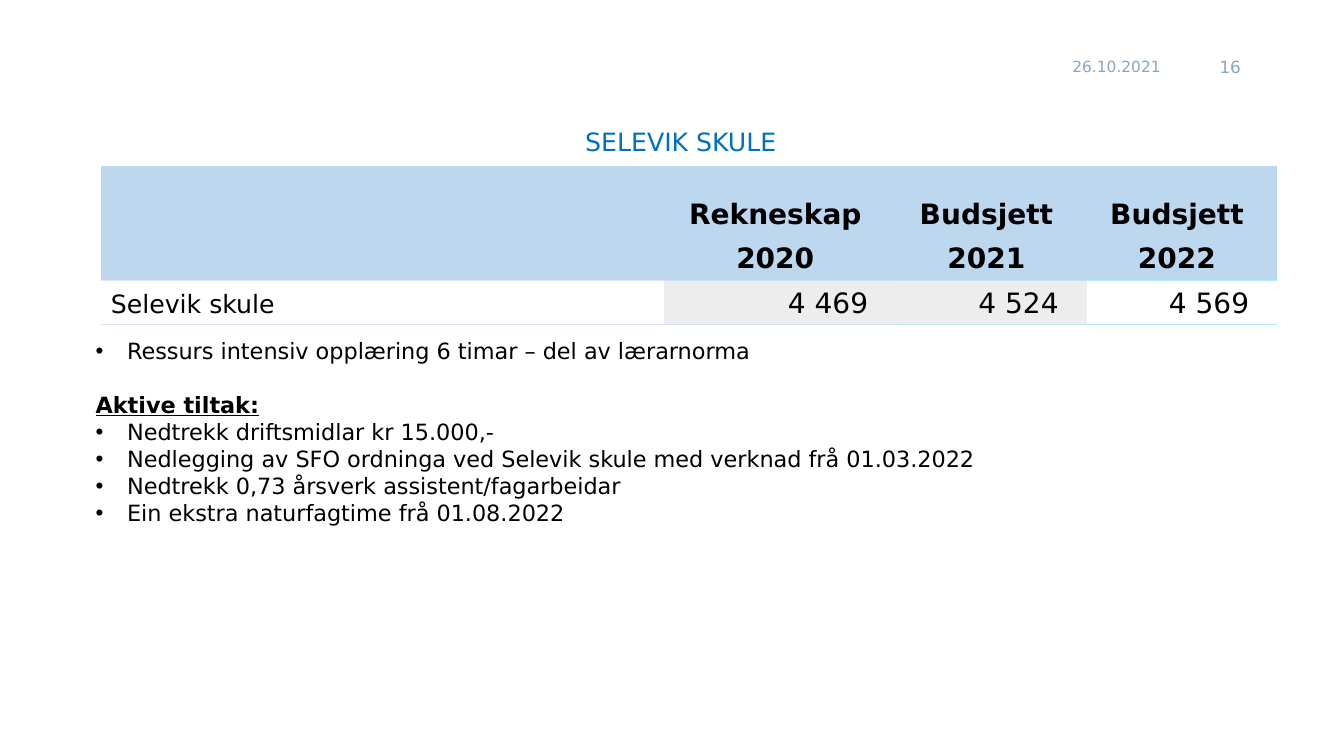
from lxml import etree
from pptx import Presentation
from pptx import util as u
from pptx.dml.color import RGBColor
from pptx.enum import text
from pptx.oxml.ns import qn

COLORS = {"black": "000000", "title": "0070C0", "muted": "86A7C2",
          "header": "BDD7EE", "past": "EDEDED"}
RULES = ["E8E0F6", "D0E0F6", "C0E4F6", "B0E8F6"]
NO_STYLE = "{2D5ABB26-0587-4C30-8999-92F81FD0307C}"
LEFT, CENTER, RIGHT = text.PP_ALIGN.LEFT, text.PP_ALIGN.CENTER, text.PP_ALIGN.RIGHT
MIDDLE, BOTTOM = text.MSO_ANCHOR.MIDDLE, text.MSO_ANCHOR.BOTTOM


class Deck:
    """Holds the style and the current slide, and draws its elements."""

    def __init__(self, width, height, font="DejaVu Sans"):
        self.prs = Presentation()
        self.prs.slide_width, self.prs.slide_height = u.Pt(width), u.Pt(height)
        self.s = self.prs.slides.add_slide(self.prs.slide_layouts[6])
        self.font = font

    def para(self, p, words, size, color="black", align=LEFT, bold=False,
             underline=False, bullet=False, before=0):
        pPr = p._p.get_or_add_pPr()
        if bullet:
            pPr.set("marL", str(u.Pt(22.5)))
            pPr.set("indent", str(u.Pt(-22.5)))
            etree.SubElement(pPr, qn("a:buFont")).set("typeface", "Arial")
            etree.SubElement(pPr, qn("a:buChar")).set("char", "•")
        p.alignment = align
        if before:
            p.space_before = u.Pt(before)
        r = p.add_run()
        r.text = words
        f = r.font
        f.name, f.size, f.bold, f.underline = self.font, u.Pt(size), bold, underline
        f.color.rgb = RGBColor.from_string(COLORS[color])

    def textbox(self, x, y, w, h, paras, anchor=text.MSO_ANCHOR.TOP):
        tf = self.s.shapes.add_textbox(*map(u.Pt, (x, y, w, h))).text_frame
        tf.word_wrap = True
        tf.vertical_anchor = anchor
        for i, style in enumerate(paras):
            p = tf.add_paragraph() if i else tf.paragraphs[0]
            self.para(p, **style)

    def border(self, cell, sides, color):
        tcPr = cell._tc.get_or_add_tcPr()
        for i, side in enumerate(sides):
            ln = etree.Element(qn("a:ln" + side), w=str(u.Pt(0.75)))
            fill = etree.SubElement(ln, qn("a:solidFill"))
            etree.SubElement(fill, qn("a:srgbClr")).set("val", color)
            tcPr.insert(i, ln)

    def cell(self, cell, words, fill=None, pad=7.2, **style):
        cell.vertical_anchor = BOTTOM
        cell.margin_right = u.Pt(pad)
        if fill:
            cell.fill.solid()
            cell.fill.fore_color.rgb = RGBColor.from_string(COLORS[fill])
        else:
            cell.fill.background()
        if words:
            self.para(cell.text_frame.paragraphs[0], words, **style)

    def table(self, x, y, widths, heights):
        sp = self.s.shapes.add_table(len(heights), len(widths), u.Pt(x), u.Pt(y),
                                     u.Pt(sum(widths)), u.Pt(sum(heights)))
        tbl = sp.table
        tbl.first_row = tbl.horz_banding = False
        tbl._tbl.tblPr.find(qn("a:tableStyleId")).text = NO_STYLE
        for col, width in zip(tbl.columns, widths):
            col.width = u.Pt(width)
        for row, height in zip(tbl.rows, heights):
            row.height = u.Pt(height)
        return tbl


def main():
    d = Deck(960, 540)
    d.textbox(758.9, 33.1, 82.8, 28.8,
              [dict(words="26.10.2021", size=11, color="muted")], MIDDLE)
    d.textbox(852.5, 33.1, 41, 28.8,
              [dict(words="16", size=12, color="muted", align=RIGHT)], MIDDLE)

    measures = ["Nedtrekk driftsmidlar kr 15.000,-",
                "Nedlegging av SFO ordninga ved Selevik skule med verknad frå 01.03.2022",
                "Nedtrekk 0,73 årsverk assistent/fagarbeidar",
                "Ein ekstra naturfagtime frå 01.08.2022"]
    d.textbox(61.2, 86.4, 850.3, 334.1, [
        dict(words="SELEVIK SKULE", size=18, color="title", align=CENTER),
        dict(words="Ressurs intensiv opplæring 6 timar – del av lærarnorma",
             size=16, bullet=True, before=129.5),
        dict(words="Aktive tiltak:", size=16, bold=True, underline=True, before=19.5),
        *(dict(words=m, size=16, bullet=True) for m in measures)])

    tbl = d.table(72, 118.8, [402.5, 165.6, 136.1, 136.1], [49.7, 31.7, 31.7])
    headers = [["", "Rekneskap", "Budsjett", "Budsjett"], ["", "2020", "2021", "2022"]]
    for i, row in enumerate(headers):
        for j, words in enumerate(row):
            d.cell(tbl.cell(i, j), words, "header", pad=14.2, size=20,
                   align=CENTER, bold=True)
    d.cell(tbl.cell(2, 0), "Selevik skule", size=18)
    amounts = [("4 469", "past"), ("4 524", "past"), ("4 569", None)]
    for j, (words, fill) in enumerate(amounts, 1):
        d.cell(tbl.cell(2, j), words, fill, pad=20, size=20, align=RIGHT)
    for j, color in enumerate(RULES):
        d.border(tbl.cell(1, j), "B", color)
        d.border(tbl.cell(2, j), "TB", color)
    d.prs.save("out.pptx")


if __name__ == "__main__":
    main()
